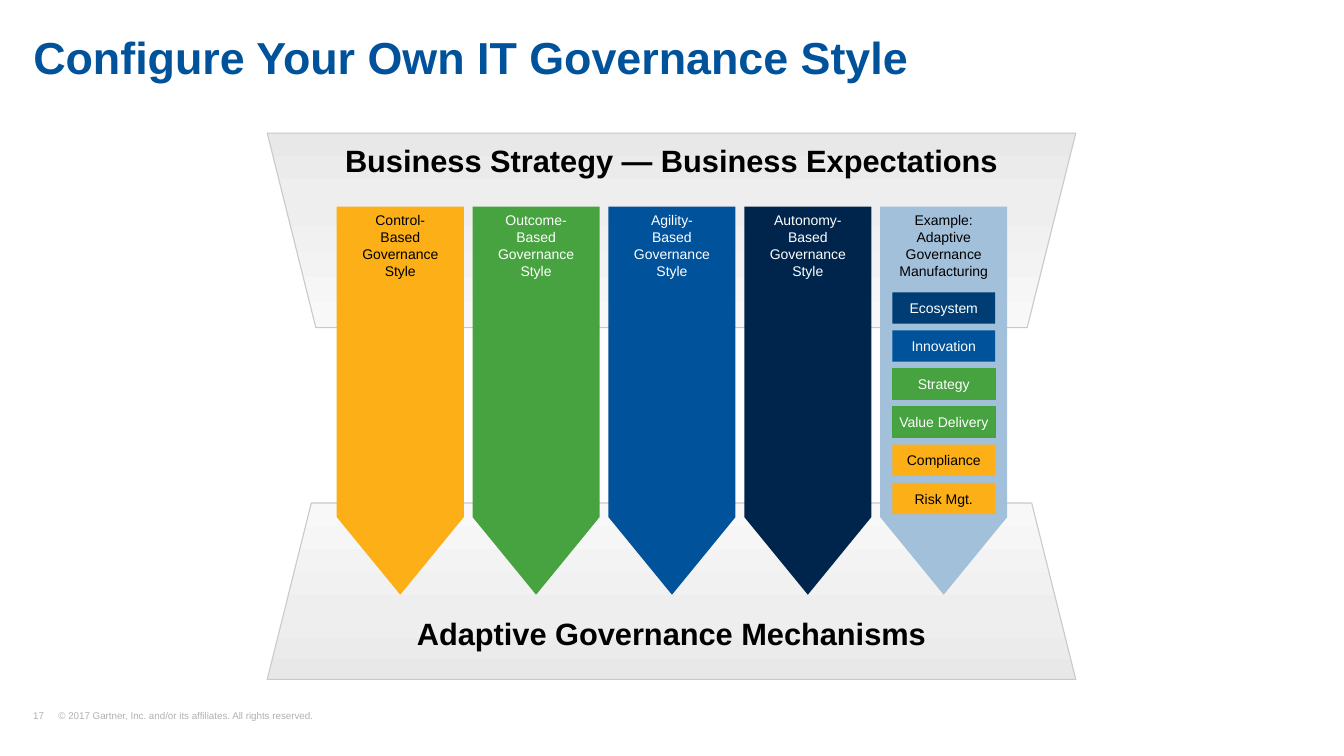
from collections import namedtuple
from copy import deepcopy

from lxml.etree import SubElement
from pptx import Presentation
from pptx.dml.color import RGBColor
from pptx.enum.shapes import MSO_SHAPE
from pptx.enum.text import MSO_ANCHOR, MSO_AUTO_SIZE, PP_ALIGN
from pptx.oxml.ns import qn
from pptx.util import Inches, Pt

Box = namedtuple("Box", "left top width height")

BLACK = RGBColor(0x00, 0x00, 0x00)
WHITE = RGBColor(0xFF, 0xFF, 0xFF)
BLUE = RGBColor(0x00, 0x52, 0x9B)
DEEP_BLUE = RGBColor(0x00, 0x3D, 0x74)
NAVY = RGBColor(0x00, 0x25, 0x4C)
PALE_BLUE = RGBColor(0xA3, 0xC0, 0xDB)
AMBER = RGBColor(0xFC, 0xAF, 0x17)
GREEN = RGBColor(0x46, 0xA3, 0x3F)
GREEN_EDGE = RGBColor(0x42, 0xA2, 0x3B)
FOOTER_GREY = RGBColor(0xB2, 0xB2, 0xB2)
BAND_EDGE = RGBColor(0xC8, 0xC8, 0xC8)
BAND_STOPS = [
    (0, RGBColor(0xE8, 0xE8, 0xE8)),
    (0.35, RGBColor(0xEE, 0xEE, 0xEE)),
    (1, RGBColor(0xF8, 0xF8, 0xF8)),
]

STYLES = [
    (["Control-", "Based Governance Style"], AMBER, BLACK),
    (["Outcome-", "Based Governance Style"], GREEN, WHITE),
    (["Agility-", "Based Governance Style"], BLUE, WHITE),
    (["Autonomy-", "Based Governance Style"], NAVY, WHITE),
    (["Example:", "Adaptive Governance", "Manufacturing"], PALE_BLUE, BLACK),
]
MECHANISMS = [
    ("Ecosystem", DEEP_BLUE, WHITE, None),
    ("Innovation", BLUE, WHITE, None),
    ("Strategy", GREEN, WHITE, GREEN_EDGE),
    ("Value Delivery", GREEN, WHITE, GREEN_EDGE),
    ("Compliance", AMBER, BLACK, None),
    ("Risk Mgt.", AMBER, BLACK, None),
]


def inches(box):
    return [Inches(length) for length in box]


def write(paragraph, lines, size, color, bold=False, align=PP_ALIGN.CENTER):
    paragraph.alignment = align
    for index, line in enumerate(lines):
        if index:
            paragraph.add_line_break()
        run = paragraph.add_run()
        run.text = line
        run.font.name = "Arial"
        run.font.size = Pt(size)
        run.font.bold = bold
        run.font.color.rgb = color


def set_insets(frame, top=0):
    frame.margin_left = frame.margin_right = frame.margin_bottom = 0
    frame.margin_top = Inches(top)


def add_filled_shape(slide, kind, box, fill, edge=None):
    shape = slide.shapes.add_shape(kind, *inches(box))
    shape.shadow.inherit = False
    if fill is not None:
        shape.fill.solid()
        shape.fill.fore_color.rgb = fill
    if edge is None:
        shape.line.fill.background()
    else:
        shape.line.color.rgb = edge
        shape.line.width = Pt(0.75)
    shape.text_frame.word_wrap = True
    return shape


def place_title(slide, box):
    title = slide.shapes.title
    title.left, title.top, title.width, title.height = inches(box)
    frame = title.text_frame
    frame.auto_size = MSO_AUTO_SIZE.NONE
    frame.vertical_anchor = MSO_ANCHOR.TOP
    set_insets(frame, top=0.1)
    paragraph = frame.paragraphs[0]
    paragraph.line_spacing = 0.9
    write(paragraph, ["Configure Your Own IT Governance Style"], 32, BLUE, True, PP_ALIGN.LEFT)


def add_footer(slide, box):
    frame = slide.shapes.add_textbox(*inches(box)).text_frame
    frame.word_wrap = True
    frame.vertical_anchor = MSO_ANCHOR.BOTTOM
    set_insets(frame)
    paragraph = frame.paragraphs[0]
    paragraph.line_spacing = 0.9
    paragraph.space_after = Pt(6)
    tabs = SubElement(paragraph._p.get_or_add_pPr(), qn("a:tabLst"))
    SubElement(tabs, qn("a:tab"), pos=str(Inches(0.25)), algn="l")
    footer = "17\t© 2017 Gartner, Inc. and/or its affiliates. All rights reserved."
    write(paragraph, [footer], 7, FOOTER_GREY, align=PP_ALIGN.LEFT)


def add_band(slide, box, rotation):
    band = add_filled_shape(slide, MSO_SHAPE.TRAPEZOID, box, None, BAND_EDGE)
    band.rotation = rotation
    band.fill.gradient()
    band.fill.gradient_angle = 90
    stop_list = next(band._element.spPr.iter(qn("a:gsLst")))
    stop_list.insert(1, deepcopy(stop_list[0]))
    for stop, (position, color) in zip(band.fill.gradient_stops, BAND_STOPS):
        stop.position = position
        stop.color.rgb = color


def add_heading(slide, box, text):
    frame = slide.shapes.add_textbox(*inches(box)).text_frame
    frame.word_wrap = False
    paragraph = frame.paragraphs[0]
    paragraph.line_spacing = 0.9
    write(paragraph, [text], 22, BLACK, True)


def add_style_arrows(slide, box, width):
    pitch = (box.width - width) / (len(STYLES) - 1)
    for index, (lines, fill, color) in enumerate(STYLES):
        arrow_box = Box(box.left + index * pitch, box.top, width, box.height)
        arrow = add_filled_shape(slide, MSO_SHAPE.FLOWCHART_OFFPAGE_CONNECTOR, arrow_box, fill)
        arrow.text_frame.vertical_anchor = MSO_ANCHOR.TOP
        write(arrow.text_frame.paragraphs[0], lines, 10, color)


def add_mechanisms(slide, box, height):
    pitch = (box.height - height) / (len(MECHANISMS) - 1)
    for index, (text, fill, color, edge) in enumerate(MECHANISMS):
        tile_box = Box(box.left, box.top + index * pitch, box.width, height)
        tile = add_filled_shape(slide, MSO_SHAPE.RECTANGLE, tile_box, fill, edge)
        tile.text_frame.vertical_anchor = MSO_ANCHOR.MIDDLE
        set_insets(tile.text_frame)
        write(tile.text_frame.paragraphs[0], [text], 10, color)


def add_governance_diagram(slide, box):
    left, top, width, height = box
    add_band(slide, Box(left, top, width, 1.93), 180)
    add_band(slide, Box(left, top + height - 1.75, width, 1.75), 0)
    arrows = Box(left + 0.69, top + 0.73, 6.65, 3.85)
    arrow_width = 1.26
    add_style_arrows(slide, arrows, arrow_width)
    add_heading(slide, Box(left + 0.63, top + 0.08, 6.76, 0.43),
                "Business Strategy — Business Expectations")
    add_heading(slide, Box(left + 1.35, top + 4.77, 5.32, 0.43),
                "Adaptive Governance Mechanisms")
    last_arrow_left = arrows.left + arrows.width - arrow_width
    add_mechanisms(slide, Box(last_arrow_left + 0.12, arrows.top + 0.85, 1.02, 2.2), 0.31)


def main():
    presentation = Presentation()
    presentation.slide_width = Inches(13.33)
    presentation.slide_height = Inches(7.5)
    slide = presentation.slides.add_slide(presentation.slide_layouts[5])
    place_title(slide, Box(0.33, 0.25, 12.66, 0.59))
    add_governance_diagram(slide, Box(2.65, 1.32, 8.02, 5.42))
    add_footer(slide, Box(0.33, 7.05, 3.23, 0.11))
    presentation.save("out.pptx")


if __name__ == "__main__":
    main()
